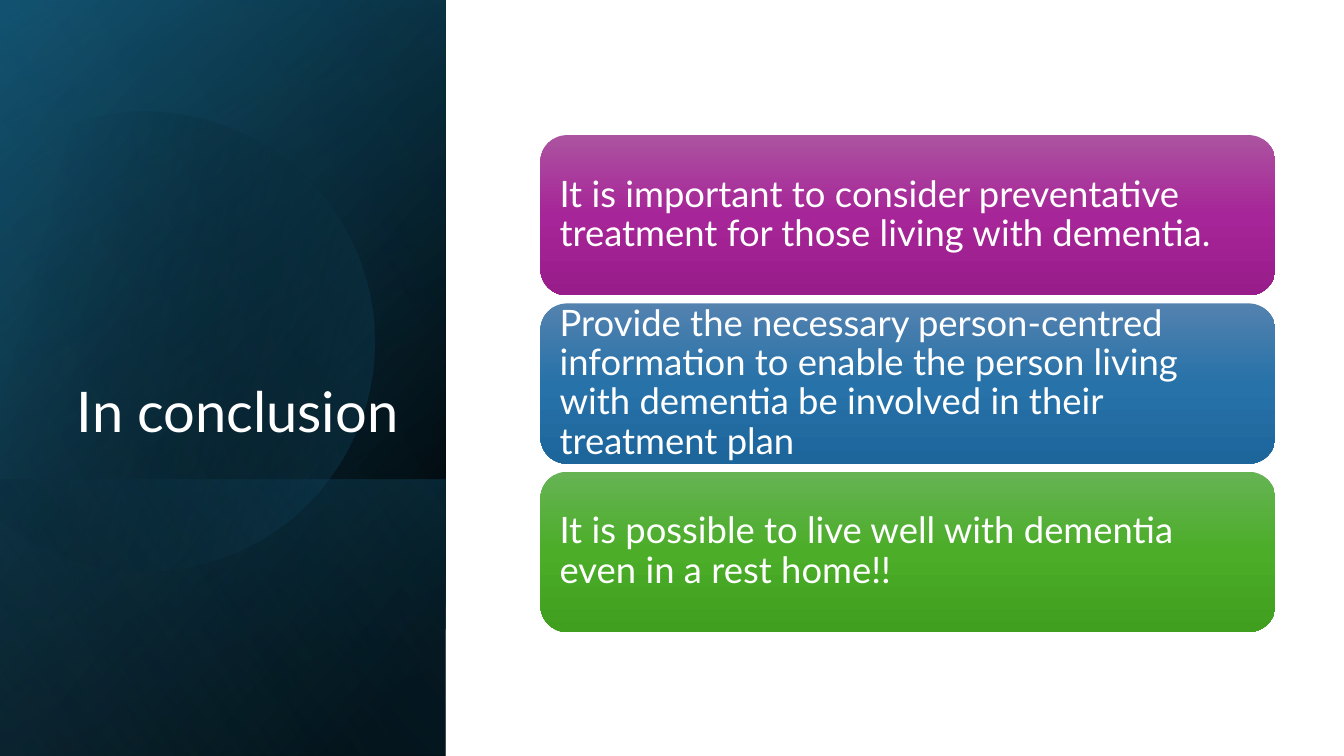
from math import cos, radians, sin, tan

from pptx import Presentation
from pptx.dml.color import RGBColor
from pptx.enum import shapes, text
from pptx.oxml import parse_xml
from pptx.oxml.ns import nsdecls, qn
from pptx.util import Inches, Pt

BLACK = RGBColor(0x00, 0x00, 0x00)
WHITE = RGBColor(0xFF, 0xFF, 0xFF)
DEEP_TEAL = RGBColor(0x10, 0x48, 0x62)
TEAL = RGBColor(0x15, 0x60, 0x82)
SKY = RGBColor(0x46, 0xB1, 0xE1)
PURPLES = [RGBColor(0xAC, 0x53, 0xA0), RGBColor(0xA6, 0x25, 0x98), RGBColor(0x99, 0x1C, 0x8B)]
BLUES = [RGBColor(0x53, 0x82, 0xAF), RGBColor(0x27, 0x72, 0xA9), RGBColor(0x1D, 0x66, 0x9C)]
GREENS = [RGBColor(0x66, 0xB3, 0x54), RGBColor(0x4B, 0xAD, 0x28), RGBColor(0x40, 0x9F, 0x1E)]

CONCLUSIONS = [
    ("It is important to consider preventative treatment for those living with dementia.", PURPLES),
    ("Provide the necessary person-centred information to enable the person living "
     "with dementia be involved in their treatment plan", BLUES),
    ("It is possible to live well with dementia even in a rest home!!", GREENS),
]


def paint_gradient(sp, stops, angle):
    """Fill with (position %, colour, opacity %) stops along a clockwise angle; no line or shadow."""
    sp.shadow.inherit = False
    sp.line.fill.background()
    sp.fill.gradient()
    stop_xml = "".join(
        f'<a:gs pos="{pos * 1000}"><a:srgbClr val="{color}">'
        f'<a:alpha val="{opacity * 1000}"/></a:srgbClr></a:gs>'
        for pos, color, opacity in stops)
    gradient = parse_xml(
        f'<a:gradFill {nsdecls("a")} rotWithShape="1"><a:gsLst>{stop_xml}</a:gsLst>'
        f'<a:lin ang="{angle * 60000}" scaled="0"/></a:gradFill>')
    sp_pr = sp._element.spPr
    sp_pr.replace(sp_pr.find(qn("a:gradFill")), gradient)


def write_text(sp, words, size, align, anchor, margins):
    tf = sp.text_frame
    tf.word_wrap = True
    tf.vertical_anchor = anchor
    tf.margin_left = tf.margin_right = Inches(margins[0])
    tf.margin_top = tf.margin_bottom = Inches(margins[1])
    p = tf.paragraphs[0]
    p.alignment = align
    p.line_spacing = 0.9
    r = p.add_run()
    r.text = words
    r.font.size = Pt(size)
    r.font.name = "Lato"
    r.font.color.rgb = WHITE


def add_wash(slide, left, top, width, height, stops, angle):
    """Cover the box with a mirrored rectangle turned a quarter, so its gradient turns too."""
    sp = slide.shapes.add_shape(
        shapes.MSO_SHAPE.RECTANGLE,
        Inches(left + (width - height) / 2), Inches(top + (height - width) / 2),
        Inches(height), Inches(width))
    sp.rotation = 90
    sp._element.spPr.find(qn("a:xfrm")).set("flipH", "1")
    paint_gradient(sp, stops, angle)


def arc_points(center_x, center_y, radius, angles):
    """Start point, then two control points and an end point for each arc."""
    def at(angle, shift=0):
        a = radians(angle)
        return (Inches(center_x + radius * (cos(a) - shift * sin(a))),
                Inches(center_y + radius * (sin(a) + shift * cos(a))))

    points = [at(angles[0])]
    for a, b in zip(angles, angles[1:]):
        pull = 4 / 3 * tan(radians(b - a) / 4)
        points += [at(a, pull), at(b, -pull), at(b)]
    return points


def add_clipped_disc(slide, center_x, center_y, radius):
    """Draw a disc cut by a chord, tilted so that the chord stands upright."""
    points = arc_points(center_x, center_y, radius, [-118, -90, 0, 90, 150])
    builder = slide.shapes.build_freeform(*points[0])
    builder.add_line_segments(points[1:], close=True)
    sp = builder.convert_to_shape()
    lines = list(sp._element.iter(qn("a:lnTo")))
    for i in range(0, len(lines), 3):
        curve = parse_xml(f'<a:cubicBezTo {nsdecls("a")}/>')
        lines[i].addprevious(curve)
        for line in lines[i:i + 3]:
            curve.append(line[0])
            line.getparent().remove(line)
    sp.rotation = 343.9
    paint_gradient(sp, [(29, BLACK, 0), (100, TEAL, 43)], 30)


def add_title_panel(slide, left, top, width, height):
    foot = 2.74
    panel = (left, top, width, height)
    add_wash(slide, *panel, [(8, BLACK, 100), (100, DEEP_TEAL, 100)], 50)
    add_wash(slide, *panel, [(0, BLACK, 0), (99, TEAL, 46)], 30)
    add_wash(slide, left, top + height - foot, width, foot,
             [(2, TEAL, 29), (100, BLACK, 30)], 130)
    add_clipped_disc(slide, left + 1.43, top + 3.35, 2.28)
    add_wash(slide, *panel, [(0, BLACK, 0), (99, SKY, 11)], 120)
    title = slide.shapes.add_textbox(
        Inches(left + 0.64), Inches(top + 1.84), Inches(3.41), Inches(2.62))
    write_text(title, "In conclusion", 40, text.PP_ALIGN.RIGHT,
               text.MSO_ANCHOR.BOTTOM, (0.1, 0.05))


def add_conclusions(slide, left, top, width, height):
    """Stack one rounded card per conclusion, evenly spaced over the box."""
    card_height, inset = 1.59, 0.08
    pitch = (height - card_height) / (len(CONCLUSIONS) - 1)
    for i, (words, colors) in enumerate(CONCLUSIONS):
        card_top = top + i * pitch
        card = slide.shapes.add_shape(
            shapes.MSO_SHAPE.ROUNDED_RECTANGLE,
            Inches(left), Inches(card_top), Inches(width), Inches(card_height))
        paint_gradient(card, [(50 * n, c, 100) for n, c in enumerate(colors)], 90)
        label = slide.shapes.add_textbox(
            Inches(left + inset), Inches(card_top + inset),
            Inches(width - 2 * inset), Inches(card_height - 2 * inset))
        write_text(label, words, 26, text.PP_ALIGN.LEFT,
                   text.MSO_ANCHOR.MIDDLE, (0.11, 0.11))


def main():
    prs = Presentation()
    prs.slide_width, prs.slide_height = Inches(13.33), Inches(7.5)
    slide = prs.slides.add_slide(prs.slide_layouts[6])
    add_title_panel(slide, 0, 0, 4.42, 7.5)
    add_conclusions(slide, 5.36, 1.34, 7.29, 4.93)
    prs.save("out.pptx")


if __name__ == "__main__":
    main()
